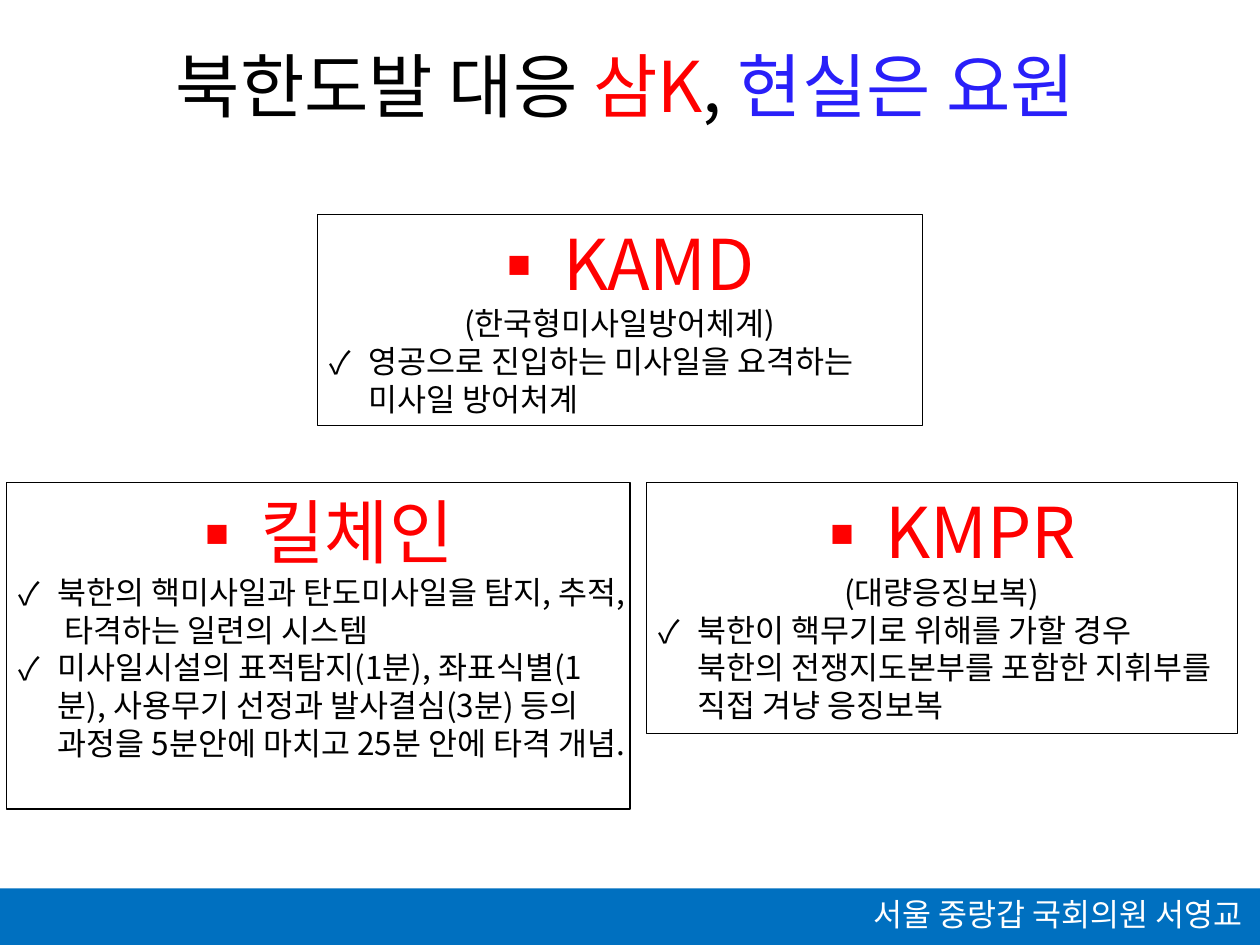
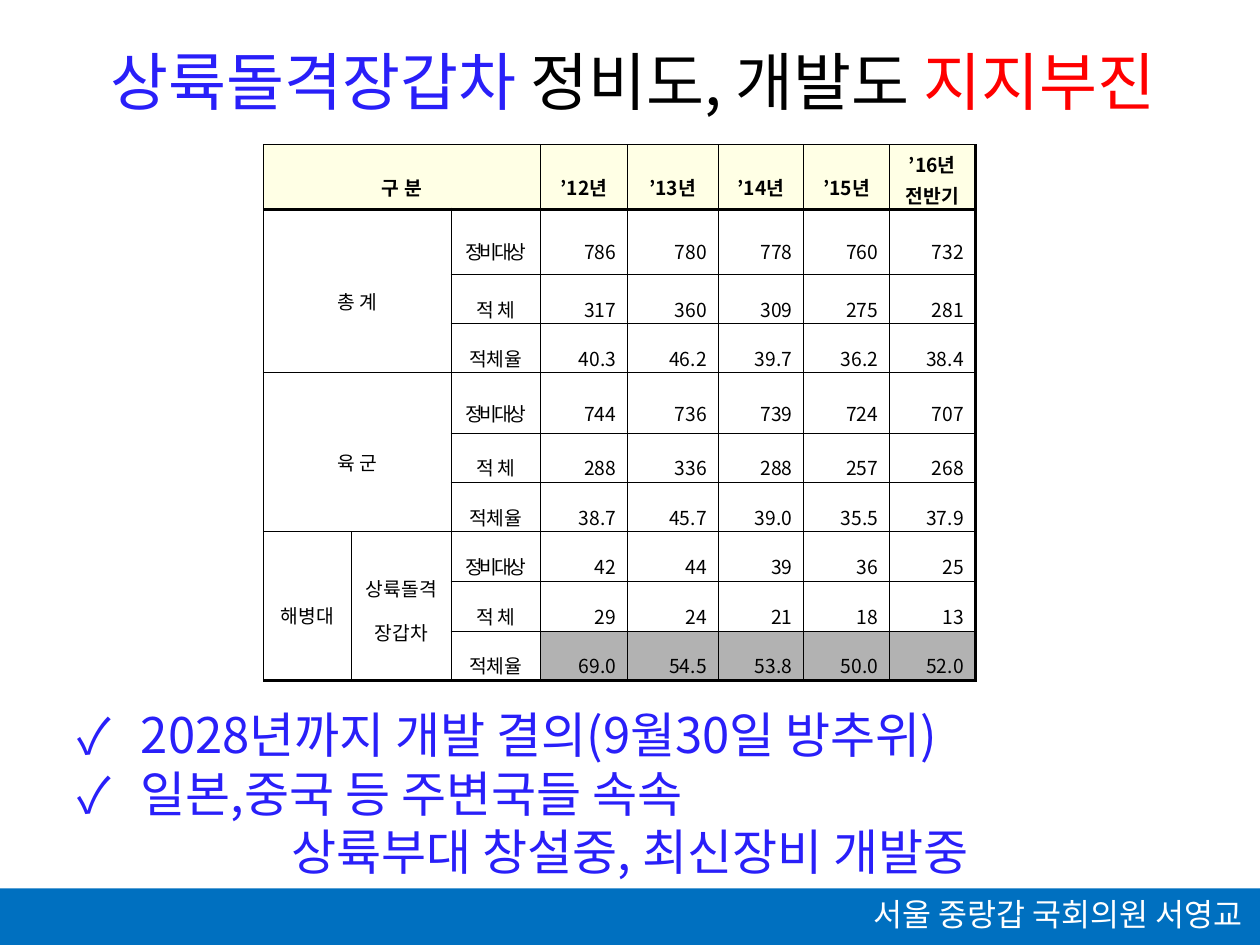
import pptx
import pptx.dml.color
import pptx.enum.shapes
import pptx.enum.text
import pptx.oxml.ns
import pptx.util
from lxml import etree

FONT = "Noto Sans CJK KR"
COLORS = {
    "black": "000000", "white": "FFFFFF", "red": "FF0000", "blue": "291FF9",
    "band": "0070C0", "header": "FFFFE5", "highlight": "B2B2B2",
}
WIDTH, HEIGHT = pptx.util.Inches(10), pptx.util.Inches(7.5)
COLUMN, ROW = WIDTH / 100, HEIGHT / 75
BAND_TOP = 70.5
ALIGN = pptx.enum.text.PP_ALIGN
ANCHOR = pptx.enum.text.MSO_ANCHOR
RECTANGLE = pptx.enum.shapes.MSO_SHAPE.RECTANGLE
qn = pptx.oxml.ns.qn

THIN, THICK = 0.56, 1.98
COLUMN_WIDTHS = [7, 7.9, 7.1, 6.9, 7.2, 6.8, 6.8, 6.8]
ROW_HEIGHTS = [5.1, 5.2, 3.9, 3.9, 4.8, 3.9, 3.9, 4, 3.9, 3.9]
YEARS = ["’12년", "’13년", "’14년", "’15년"]
MEASURES = [("정비대상", -2), ("적 체", -0.3), ("적체율", -0.3)]
MAINTENANCE = [
    ["786", "780", "778", "760", "732"],
    ["317", "360", "309", "275", "281"],
    ["40.3", "46.2", "39.7", "36.2", "38.4"],
    ["744", "736", "739", "724", "707"],
    ["288", "336", "288", "257", "268"],
    ["38.7", "45.7", "39.0", "35.5", "37.9"],
    ["42", "44", "39", "36", "25"],
    ["29", "24", "21", "18", "13"],
    ["69.0", "54.5", "53.8", "50.0", "52.0"],
]


def color(name):
    return pptx.dml.color.RGBColor.from_string(COLORS[name])


def place(left, top, width, height):
    """Turn grid columns and rows into lengths."""
    return [round(length) for length in
            (left * COLUMN, top * ROW, width * COLUMN, height * ROW)]


def write_text(paragraph, text, size=18, fill="black", bold=False, spacing=0):
    run = paragraph.add_run()
    run.text = text
    font = run.font
    font.size, font.bold, font.name = pptx.util.Pt(size), bold, FONT
    font.color.rgb = color(fill)
    properties = run._r.get_or_add_rPr()
    if spacing:
        properties.set("spc", str(round(spacing * 100)))
    etree.SubElement(properties, qn("a:ea")).set("typeface", FONT)


def add_bullet(paragraph, character, indent):
    properties = paragraph._p.get_or_add_pPr()
    length = pptx.util.Inches(indent)
    properties.set("marL", str(length))
    properties.set("indent", str(-length))
    etree.SubElement(properties, qn("a:buFont")).set("typeface", FONT)
    etree.SubElement(properties, qn("a:buChar")).set("char", character)


def next_paragraph(frame, align=ALIGN.LEFT):
    """Use the empty first paragraph, or add another."""
    first = frame.paragraphs[0]
    paragraph = frame.add_paragraph() if first.runs else first
    paragraph.alignment = align
    return paragraph


def prepare_frame(shape):
    frame = shape.text_frame
    frame.word_wrap = True
    frame.auto_size = pptx.enum.text.MSO_AUTO_SIZE.NONE
    frame.vertical_anchor = ANCHOR.TOP
    return frame


def add_textbox(slide, *box):
    return prepare_frame(slide.shapes.add_textbox(*place(*box)))


def add_rectangle(slide, box, fill=None, line=None):
    shape = slide.shapes.add_shape(RECTANGLE, *place(*box))
    shape.shadow.inherit = False
    if fill:
        shape.fill.solid()
        shape.fill.fore_color.rgb = color(fill)
    else:
        shape.fill.background()
    if line:
        shape.line.color.rgb = color(line)
        shape.line.width = pptx.util.Pt(0.75)
    else:
        shape.line.fill.background()
    return shape


def add_titled_slide(presentation, parts, size, box):
    """Add a slide with a title of (text, colour) parts and the footer band."""
    slide = presentation.slides.add_slide(presentation.slide_layouts[5])
    title = slide.shapes.title
    title.left, title.top, title.width, title.height = place(*box)
    paragraph = next_paragraph(prepare_frame(title), ALIGN.CENTER)
    for text, fill in parts:
        write_text(paragraph, text, size=size, fill=fill)
    add_rectangle(slide, (0, BAND_TOP, 100, 75 - BAND_TOP), fill="band")
    footer = add_textbox(slide, 60.2, BAND_TOP, 39.4, 4.1)
    write_text(next_paragraph(footer, ALIGN.RIGHT), "서울 중랑갑 국회의원 서영교", fill="white")
    return slide


def add_system_box(slide, box, name, points, meaning=None):
    frame = prepare_frame(add_rectangle(slide, box, line="black"))
    heading = next_paragraph(frame, ALIGN.CENTER)
    add_bullet(heading, "▪", 0.62)
    write_text(heading, name, size=40, fill="red")
    if meaning:
        write_text(next_paragraph(frame, ALIGN.CENTER), meaning)
    for point in points:
        paragraph = next_paragraph(frame)
        add_bullet(paragraph, "✓", 0.31)
        write_text(paragraph, point)


def set_border(cell, side, width):
    border = etree.SubElement(cell._tc.get_or_add_tcPr(), qn("a:ln" + side))
    border.set("w", str(pptx.util.Pt(width)))
    fill = etree.SubElement(border, qn("a:solidFill"))
    etree.SubElement(fill, qn("a:srgbClr")).set("val", COLORS["black"])


def style_cell(cell, top, right, bottom, fill):
    cell.vertical_anchor = ANCHOR.MIDDLE
    cell.margin_left = cell.margin_right = pptx.util.Inches(0.09)
    # Small vertical margins let the widely spaced lines fit the row heights.
    cell.margin_top, cell.margin_bottom = pptx.util.Inches(0.02), 0
    for side, width in zip("LRTB", (THIN, right, top, bottom)):
        set_border(cell, side, width)
    if fill:
        cell.fill.solid()
        cell.fill.fore_color.rgb = color(fill)
    else:
        cell.fill.background()


def write_cell(cell, text, align=ALIGN.CENTER, line_spacing=1.6, **style):
    paragraph = next_paragraph(cell.text_frame, align)
    paragraph.line_spacing = line_spacing
    write_text(paragraph, text, size=11, **style)
    return paragraph


def style_table(table):
    last_row, last_column = len(ROW_HEIGHTS) - 1, len(COLUMN_WIDTHS) - 1
    for row in range(last_row + 1):
        for column in range(last_column + 1):
            cell = table.cell(row, column)
            if cell.is_spanned:
                continue
            ends_table = row + cell.span_height - 1 == last_row
            fill = None
            if row == 0:
                fill = "header"
            elif row == last_row and column > 2:
                fill = "highlight"
            style_cell(cell, fill=fill,
                       top=THICK if row == 1 else THIN,
                       right=THICK if column == last_column else THIN,
                       bottom=THICK if row == 0 or ends_table else THIN)


def add_maintenance_table(slide):
    box = place(20.9, 11.5, sum(COLUMN_WIDTHS), sum(ROW_HEIGHTS))
    table = slide.shapes.add_table(len(ROW_HEIGHTS), len(COLUMN_WIDTHS), *box).table
    table.first_row = table.horz_banding = False
    for column, width in zip(table.columns, COLUMN_WIDTHS):
        column.width = round(width * COLUMN)
    for row, height in zip(table.rows, ROW_HEIGHTS):
        row.height = round(height * ROW)
    for start, end in [((0, 0), (0, 2)), ((1, 0), (3, 1)), ((4, 0), (6, 1)),
                       ((7, 0), (9, 0)), ((7, 1), (9, 1))]:
        table.cell(*start).merge(table.cell(*end))
    style_table(table)

    write_cell(table.cell(0, 0), "구 분", bold=True)
    for column, year in enumerate(YEARS, start=3):
        write_cell(table.cell(0, column), year, bold=True)
    half_year = write_cell(table.cell(0, 7), "’", line_spacing=1.1, bold=True, spacing=-4)
    write_text(half_year, "16년 전반기", size=11, bold=True)
    for row, force in [(1, "총 계"), (4, "육 군"), (7, "해병대")]:
        write_cell(table.cell(row, 0), force)
    write_cell(table.cell(7, 1), "상륙돌격", line_spacing=1.2)
    write_cell(table.cell(7, 1), "장갑차")
    for row, values in enumerate(MAINTENANCE, start=1):
        measure, spacing = MEASURES[(row - 1) % len(MEASURES)]
        write_cell(table.cell(row, 2), measure, spacing=spacing)
        for column, value in enumerate(values, start=3):
            write_cell(table.cell(row, column), value, align=ALIGN.RIGHT)


def build_three_k_slide(presentation):
    title = [("북한도발 대응 ", "black"), ("삼K", "red"), (", ", "black"), ("현실은 요원", "blue")]
    slide = add_titled_slide(presentation, title, 40, (2.8, 2.9, 93.7, 7.7))
    add_system_box(slide, (25.2, 17, 48, 16.8), "KAMD",
                   ["영공으로 진입하는 미사일을 요격하는 미사일 방어처계"],
                   meaning="(한국형미사일방어체계)")
    add_system_box(slide, (0.5, 38.3, 49.5, 25.9), "킬체인", [
        "북한의 핵미사일과 탄도미사일을 탐지, 추적, 타격하는 일련의 시스템",
        "미사일시설의 표적탐지(1분), 좌표식별(1분), 사용무기 선정과 발사결심(3분) "
        "등의 과정을 5분안에 마치고 25분 안에 타격 개념.",
    ])
    add_system_box(slide, (51.3, 38.3, 46.9, 19.9), "KMPR",
                   ["북한이 핵무기로 위해를 가할 경우 북한의 전쟁지도본부를 포함한 "
                    "지휘부를 직접 겨냥 응징보복"],
                   meaning="(대량응징보복)")


def build_vehicle_slide(presentation):
    title = [("상륙돌격장갑차", "blue"), (" 정비도, 개발도 ", "black"), ("지지부진", "red")]
    slide = add_titled_slide(presentation, title, 36, (3, 2.9, 94.5, 7.1))
    add_maintenance_table(slide)
    outlook = add_textbox(slide, 5.2, 55.4, 89.6, 15.1)
    for text in ["2028년까지 개발 결의(9월30일 방추위)", "일본,중국 등 주변국들 속속"]:
        paragraph = next_paragraph(outlook)
        add_bullet(paragraph, "✓", 0.5)
        write_text(paragraph, text, size=28, fill="blue")
    write_text(next_paragraph(outlook, ALIGN.CENTER), "상륙부대 창설중, 최신장비 개발중",
               size=28, fill="blue")


def main():
    presentation = pptx.Presentation()
    presentation.slide_width, presentation.slide_height = WIDTH, HEIGHT
    build_three_k_slide(presentation)
    build_vehicle_slide(presentation)
    presentation.save("out.pptx")


if __name__ == "__main__":
    main()
